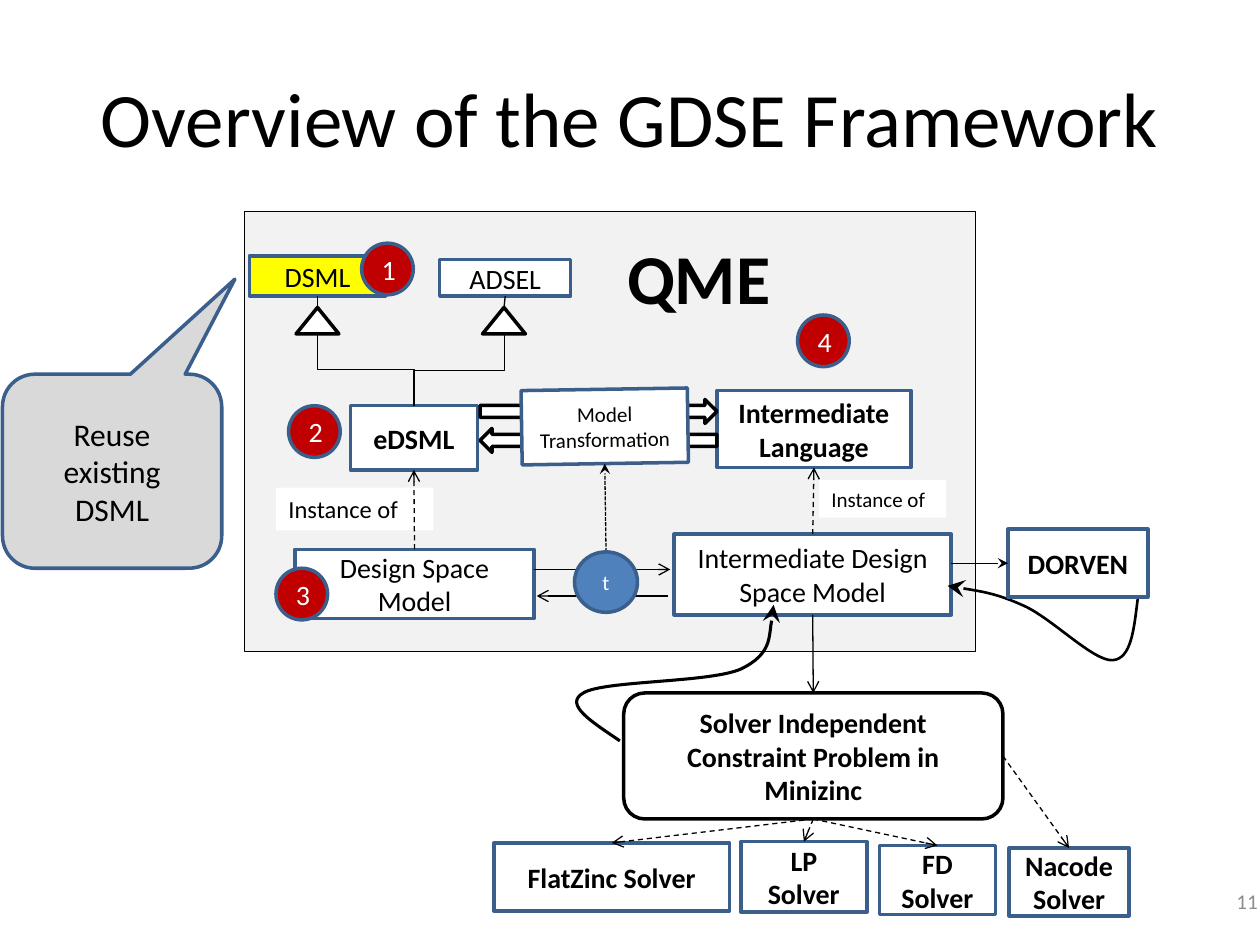
"""Build the slide that gives an overview of the GDSE framework."""
from lxml.etree import SubElement
from pptx import Presentation
from pptx.dml.color import RGBColor
from pptx.enum.dml import MSO_LINE
from pptx.enum.shapes import MSO_CONNECTOR, MSO_SHAPE
from pptx.enum.text import MSO_ANCHOR, PP_ALIGN
from pptx.oxml.ns import qn
from pptx.util import Inches, Pt

COLORS = {"black": "000000", "white": "FFFFFF", "panel": "F2F2F2", "yellow": "FFFF00",
          "edge": "3A5F8C", "red": "C00000", "blue": "4F81BD", "callout": "D9D9D9",
          "number": "8C8C8C"}

deck = Presentation()
deck.slide_width, deck.slide_height = Inches(10), Inches(7.5)
page = deck.slides.add_slide(deck.slide_layouts[5])


def add_box(kind, area, text="", size=16, bold=False, fill="white", edge="edge",
            color="black", width=2, align=PP_ALIGN.CENTER, anchor=MSO_ANCHOR.MIDDLE):
    """Add a shape, or a text box when kind is None, with its text."""
    place = [Inches(length) for length in area]
    if kind is None:
        box = page.shapes.add_textbox(*place)
    else:
        box = page.shapes.add_shape(kind, *place)
        box.shadow.inherit = False
        box.fill.solid()
        box.fill.fore_color.rgb = RGBColor.from_string(COLORS[fill])
        if edge:
            box.line.color.rgb = RGBColor.from_string(COLORS[edge])
            box.line.width = Pt(width)
        else:
            box.line.fill.background()
    frame = box.text_frame
    frame.word_wrap = True
    frame.vertical_anchor = anchor
    if text:
        frame.text = text
        for para in frame.paragraphs:
            para.alignment = align
            para.font.name, para.font.size, para.font.bold = "Calibri", Pt(size), bold
            para.font.color.rgb = RGBColor.from_string(COLORS[color])
    return box


def add_line(start, end, tail=None, dash=None, kind=MSO_CONNECTOR.STRAIGHT):
    """Join two ends, each a point or the name of a box and its side."""
    points = [(0, 0) if isinstance(stop[0], str) else stop for stop in (start, end)]
    line = page.shapes.add_connector(kind, *[Inches(v) for point in points for v in point])
    if isinstance(start[0], str):
        line.begin_connect(boxes[start[0]], start[1])
    if isinstance(end[0], str):
        line.end_connect(boxes[end[0]], end[1])
    line.line.color.rgb = RGBColor.from_string(COLORS["black"])
    line.line.width = Pt(0.75)
    if dash:
        line.line.dash_style = dash
    if tail:
        SubElement(line.line._get_or_add_ln(), qn("a:tailEnd"), type=tail)
    SubElement(line.element.spPr, qn("a:effectLst"))
    return line


title = page.shapes.title
title.left, title.top, title.width, title.height = map(Inches, (0.5, 0.3, 9, 1.25))
title.text_frame.text = "Overview of the GDSE Framework"
title.text_frame.vertical_anchor = MSO_ANCHOR.MIDDLE
heading = title.text_frame.paragraphs[0]
heading.alignment = PP_ALIGN.CENTER
heading.font.name, heading.font.size = "Calibri", Pt(44)
heading.font.color.rgb = RGBColor.from_string(COLORS["black"])

add_box(MSO_SHAPE.RECTANGLE, (1.94, 1.68, 5.8, 3.49), fill="panel", edge="black", width=0.75)

boxes = {}
for name, area, text, bold, fill in [
    ("dsml", (1.98, 2.03, 1.08, 0.32), "DSML", False, "yellow"),
    ("adsel", (3.49, 2.06, 1.04, 0.29), "ADSEL", False, "white"),
    ("edsml", (2.78, 3.22, 1.01, 0.51), "eDSML", True, "white"),
    ("design", (2.34, 4.36, 1.9, 0.55), "Design Space Model", False, "white"),
    ("flatzinc", (3.92, 6.69, 1.87, 0.54), "FlatZinc Solver", True, "white"),
    ("language", (5.69, 3.1, 1.54, 0.61), "Intermediate Language", True, "white"),
    ("model", (5.35, 4.24, 2.2, 0.64), "Intermediate Design Space Model", False, "white"),
    ("fd", (6.98, 6.71, 0.92, 0.55), "FD Solver", True, "white"),
    ("lp", (5.88, 6.68, 1, 0.56), "LP Solver", True, "white"),
    ("nacode", (8.01, 6.73, 0.95, 0.54), "Nacode\nSolver", True, "white"),
]:
    boxes[name] = add_box(MSO_SHAPE.RECTANGLE, area, text, bold=bold, fill=fill)
boxes["problem"] = add_box(MSO_SHAPE.ROUNDED_RECTANGLE, (4.95, 5.5, 3.01, 1),
                           "Solver Independent Constraint Problem in Minizinc",
                           bold=True, edge="black")

for area, size in [((2.19, 3.87, 1.25, 0.34), 14), ((6.5, 3.81, 1.01, 0.3), 12)]:
    add_box(MSO_SHAPE.RECTANGLE, area, "Instance of", size, edge=None,
            align=PP_ALIGN.LEFT, anchor=MSO_ANCHOR.TOP)

for name, left in [("dsml", 2.35), ("adsel", 3.83)]:
    boxes[name + " triangle"] = add_box(MSO_SHAPE.ISOSCELES_TRIANGLE, (left, 2.44, 0.34, 0.21),
                                        edge="black")
    add_line((name, 2), (name + " triangle", 0))
for start, end, turn in [((3.93, 3.3), (3.36, 2.58), 90), ((3.19, 2.55), (2.62, 3.32), 270)]:
    elbow = add_line(start, end, kind=MSO_CONNECTOR.ELBOW)
    elbow.element.spPr.find(qn("a:xfrm")).set("rot", str(turn * 60000))

for kind, top in [(MSO_SHAPE.LEFT_ARROW, 3.4), (MSO_SHAPE.RIGHT_ARROW, 3.17)]:
    add_box(kind, (3.81, top, 1.88, 0.19), edge="black")
boxes["transformation"] = add_box(MSO_SHAPE.RECTANGLE, (4.14, 3.09, 1.32, 0.59),
                                  "Model Transformation", 12)
boxes["transformation"].rotation = -0.9

for width, start, controls in [
    (1.5, (903, 475), [(900, 499), (898, 523), (883, 524), (868, 525), (835, 491),
                       (813, 481), (791, 471), (771, 468), (752, 465)]),
    (1.75, (492, 588), [(470, 573), (447, 559), (463, 550), (479, 540), (563, 542),
                        (588, 531), (613, 519), (614, 480), (614, 480)]),
]:
    builder = page.shapes.build_freeform(*start, scale=Inches(0.01))
    builder.add_line_segments(controls, close=False)
    curve = builder.convert_to_shape()
    curve.shadow.inherit = False
    curve.fill.background()
    curve.line.color.rgb = RGBColor.from_string(COLORS["black"])
    curve.line.width = Pt(width)
    SubElement(curve.line._get_or_add_ln(), qn("a:tailEnd"), type="stealth", w="lg", len="lg")
    outline = next(curve.element.iter(qn("a:path")))
    for index, segment in enumerate(outline.findall(qn("a:lnTo"))):
        if index % 3 == 0:
            bezier = SubElement(outline, qn("a:cubicBezTo"))
        bezier.append(segment[0])
        outline.remove(segment)

boxes["dorven"] = add_box(MSO_SHAPE.RECTANGLE, (8, 4.2, 1.11, 0.54), "DORVEN", bold=True)

for start, end, tail, dash in [
    (("model", 0), ("language", 2), "arrow", MSO_LINE.DASH),
    (("design", 0), ("edsml", 2), "arrow", MSO_LINE.DASH),
    (("problem", 2), ("flatzinc", 0), "arrow", MSO_LINE.DASH),
    (("problem", 2), ("lp", 0), "arrow", MSO_LINE.DASH),
    (("problem", 2), ("fd", 0), "arrow", MSO_LINE.DASH),
    (("problem", 3), ("nacode", 0), "arrow", MSO_LINE.DASH),
    (("model", 2), ("problem", 0), "arrow", None),
    ((7.55, 4.47), ("dorven", 1), "stealth", None),
    ((4.81, 4.38), ("transformation", 2), "stealth", MSO_LINE.SQUARE_DOT),
    ((4.24, 4.52), (5.32, 4.52), "arrow", None),
    ((5.3, 4.73), (4.26, 4.73), "arrow", None),
]:
    add_line(start, end, tail, dash)

add_box(MSO_SHAPE.OVAL, (4.56, 4.38, 0.5, 0.48), "t", 12, fill="blue", color="white")
for step, left, top in [("1", 2.87, 1.93), ("2", 2.29, 3.22), ("3", 2.19, 4.51), ("4", 6.33, 2.5)]:
    add_box(MSO_SHAPE.OVAL, (left, top, 0.41, 0.41), step, fill="red", color="white")

add_box(None, (4.83, 1.91, 1.43, 0.57), "QME", 40, bold=True)
add_box(None, (7.75, 6.95, 2.33, 0.4), "11", 12, color="number", align=PP_ALIGN.RIGHT)
callout = add_box(MSO_SHAPE.ROUNDED_RECTANGULAR_CALLOUT, (0.02, 2.97, 1.74, 1.54),
                  "Reuse existing DSML", 18, fill="callout")
callout.adjustments[0], callout.adjustments[1] = 0.56, -0.99

deck.save("out.pptx")
